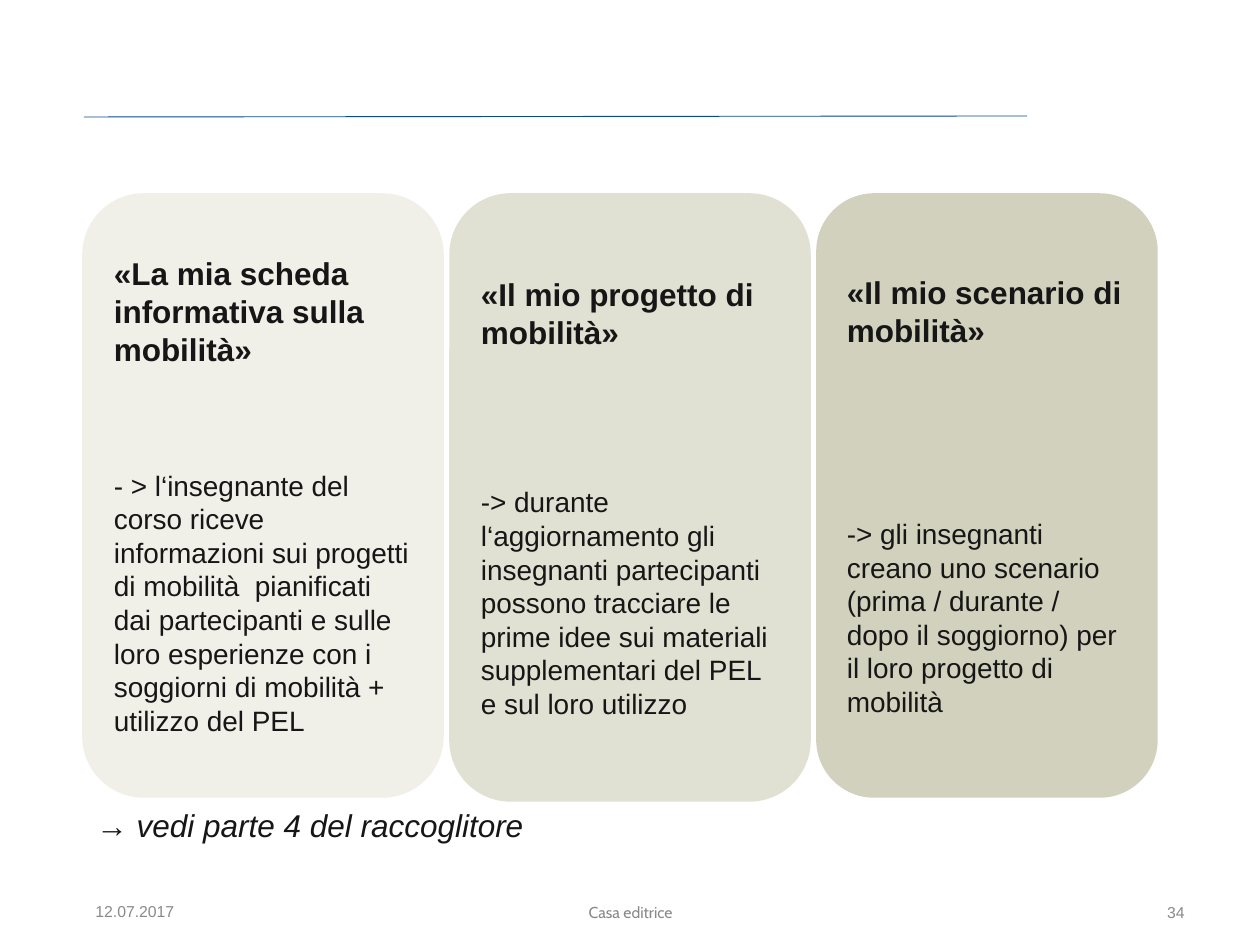
from lxml import etree
from pptx import Presentation
from pptx.dml.color import RGBColor
from pptx.enum import shapes, text
from pptx.oxml.ns import qn
from pptx.util import Emu, Pt

INK, GREY, RULE = "161616", "898989", "0A4890"
LEFT, TOP, GAP = 84, 195, 9
BLANK_LINE = 19.2

CARDS = [
    ("F0F0E9", 358, 601, 3, "«La mia scheda informativa sulla mobilità»",
     "- > l‘insegnante del corso riceve informazioni sui progetti di mobilità  pianificati "
     "dai partecipanti e sulle loro esperienze con i soggiorni di mobilità + utilizzo del PEL"),
    ("E1E1D3", 358, 605, 4, "«Il mio progetto di mobilità»",
     "-> durante l‘aggiornamento gli insegnanti partecipanti possono tracciare le prime idee "
     "sui materiali supplementari del PEL e sul loro utilizzo"),
    ("D2D1BE", 338, 601, 5, "«Il mio scenario di mobilità»",
     "-> gli insegnanti creano uno scenario (prima / durante / dopo il soggiorno) "
     "per il loro progetto di mobilità"),
]
FOOTERS = [
    ("12.07.2017", (83, 886, 294, 50), "Arial", text.PP_ALIGN.LEFT),
    ("Casa editrice", (431, 887, 399, 50), "Cabin", text.PP_ALIGN.CENTER),
    ("34", (903, 887, 294, 50), "Arial", text.PP_ALIGN.RIGHT),
]
NOTE = [("→ ", False), ("vedi parte 4 del raccoglitore", True)]


def px(n):
    return Emu(round(n * 914400 / 126))


def rgb(value):
    return RGBColor.from_string(value)


def add_run(p, words, color=INK, **fmt):
    r = p.add_run()
    r.text = words
    for key, value in {"name": "Arial", **fmt}.items():
        setattr(r.font, key, value)
    r.font.color.rgb = rgb(color)


def add_box(s, box, anchor):
    tf = s.shapes.add_textbox(*map(px, box)).text_frame
    tf.word_wrap = True
    tf.vertical_anchor = anchor
    return tf


def add_card(s, left, fill, width, height, blanks, title, body):
    sp = s.shapes.add_shape(shapes.MSO_SHAPE.ROUNDED_RECTANGLE,
                            *map(px, (left, TOP, width, height)))
    sp.shadow.inherit = False
    sp.fill.solid()
    sp.fill.fore_color.rgb = sp.line.color.rgb = rgb(fill)
    sp.line.width = Pt(2)
    tf = sp.text_frame
    tf.word_wrap = True
    tf.vertical_anchor = text.MSO_ANCHOR.MIDDLE
    head, detail = tf.paragraphs[0], tf.add_paragraph()
    head.alignment = detail.alignment = text.PP_ALIGN.LEFT
    detail.space_before = Pt(blanks * BLANK_LINE)
    add_run(head, title, size=Pt(18), bold=True)
    add_run(detail, body, size=Pt(16))


def main():
    prs = Presentation()
    prs.slide_width, prs.slide_height = px(1260), px(945)
    s = prs.slides.add_slide(prs.slide_layouts[6])

    rule = s.shapes.add_connector(shapes.MSO_CONNECTOR.STRAIGHT,
                                  *map(px, (1027, 116, LEFT, 117)))
    rule.line.color.rgb = rgb(RULE)
    rule.line.width = Pt(0.5)
    etree.SubElement(rule._element.spPr, qn("a:effectLst"))

    for words, box, font, align in FOOTERS:
        p = add_box(s, box, text.MSO_ANCHOR.MIDDLE).paragraphs[0]
        p.alignment = align
        add_run(p, words, GREY, name=font, size=Pt(9))

    left = LEFT
    for card in CARDS:
        add_card(s, left, *card)
        left += card[1] + GAP

    p = add_box(s, (LEFT, 800, 505, 50), text.MSO_ANCHOR.TOP).paragraphs[0]
    for words, italic in NOTE:
        add_run(p, words, size=Pt(18), italic=italic)

    prs.save("out.pptx")


if __name__ == "__main__":
    main()
